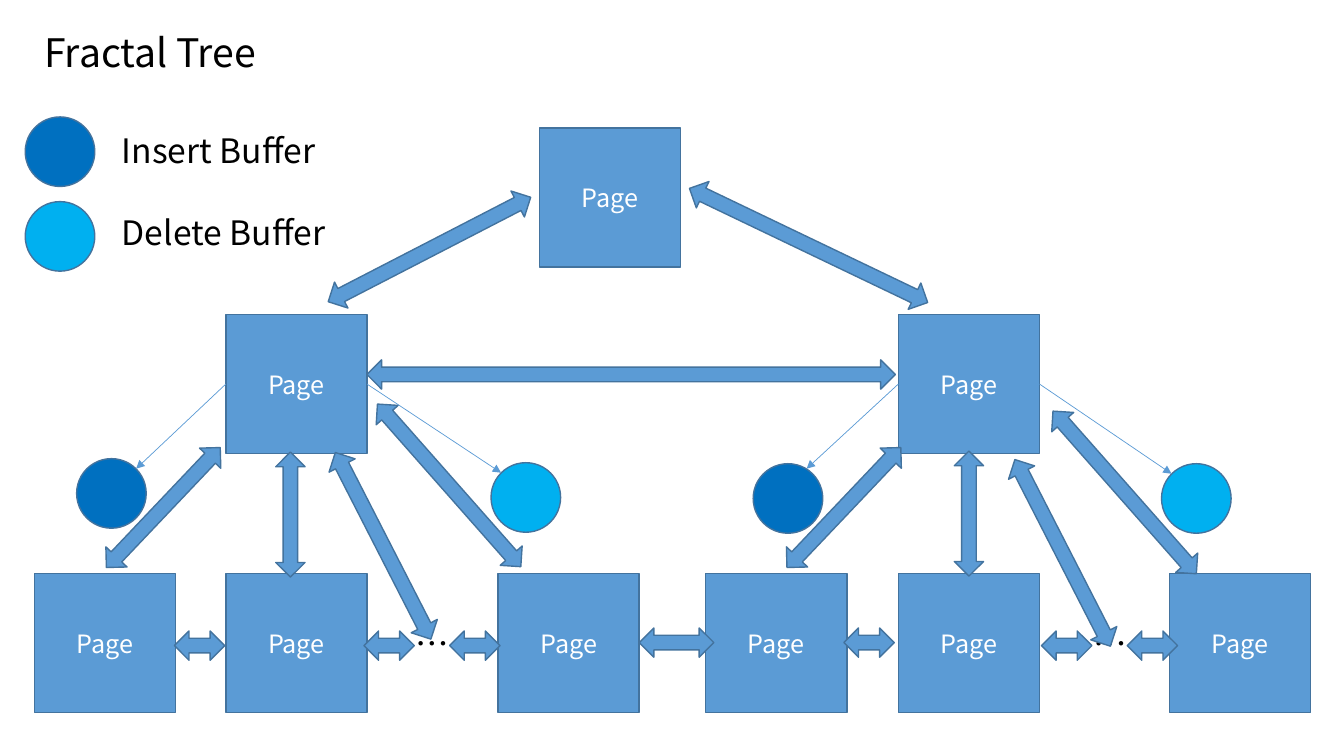
from lxml import etree
from pptx import Presentation
from pptx.dml.color import RGBColor
from pptx.enum.shapes import MSO_CONNECTOR, MSO_SHAPE
from pptx.enum.text import MSO_ANCHOR, PP_ALIGN
from pptx.oxml.ns import qn
from pptx.util import Inches, Pt

RECTANGLE = MSO_SHAPE.RECTANGLE
OVAL = MSO_SHAPE.OVAL
DOUBLE_ARROW = MSO_SHAPE.LEFT_RIGHT_ARROW
STRAIGHT = MSO_CONNECTOR.STRAIGHT
MIDDLE = MSO_ANCHOR.MIDDLE
TOP = MSO_ANCHOR.TOP
CENTER = PP_ALIGN.CENTER
LEFT = PP_ALIGN.LEFT

FONT = "Noto Sans CJK KR"
PAGE_BLUE = "5B9BD5"
OUTLINE = "43739E"
INSERT_BLUE = "0070C0"
DELETE_BLUE = "00B0F0"
WHITE = "FFFFFF"
BLACK = "000000"

PAGE_WIDTH, PAGE_HEIGHT = 1.4, 1.38
BUFFER_SIZE = 0.69
ARROW_HEIGHT = 0.29
LEFT_SIDE, RIGHT_SIDE = 1, 3

ROOT = (5.35, 1.27)
PARENT_LEFTS, PARENT_TOP = (2.24, 8.91), 3.12
LEAF_LEFTS, LEAF_TOP = (0.34, 2.24, 4.94, 7, 8.91, 11.6), 5.69

# left, top, width, rotation
TREE_ARROWS = [
    (0.8, 4.89, 1.64, 313.5), (7.55, 4.89, 1.64, 313.5),
    (3.13, 2.33, 2.26, 332.7), (6.71, 2.29, 2.62, 205.6),
    (10.08, 4.74, 2.15, 228.6), (9.5, 5.34, 2.08, 242.9),
    (2.76, 5.27, 2.08, 242.9), (3.38, 4.67, 2.15, 228.6),
    (2.26, 4.96, 1.24, 270), (8.99, 4.95, 1.24, 270),
]
SIBLING_ARROWS = [
    (3.64, 3.57, 5.24), (6.34, 6.23, 0.74), (8.37, 6.23, 0.5),
    *((left, 6.26, 0.5) for left in (1.73, 3.61, 4.46, 10.33, 11.18)),
]
ELLIPSIS_LEFTS, ELLIPSIS_TOP = (4.02, 10.75), 6.13

LEGEND = [
    ("Insert Buffer", INSERT_BLUE, 1.16, 1.24),
    ("Delete Buffer", DELETE_BLUE, 2, 2.05),
]
# parent index, side, circle position, colour, pointer end
BUFFERS = [
    (0, LEFT_SIDE, (0.76, 4.55), INSERT_BLUE, (1.35, 4.65)),
    (0, RIGHT_SIDE, (4.87, 4.59), DELETE_BLUE, (4.97, 4.69)),
    (1, LEFT_SIDE, (7.47, 4.6), INSERT_BLUE, (8, 4.65)),
    (1, RIGHT_SIDE, (11.52, 4.6), DELETE_BLUE, (11.62, 4.7)),
]


def color(hex_value):
    return RGBColor.from_string(hex_value)


def write(holder, text, size, hex_value, align=LEFT, anchor=TOP):
    frame = holder.text_frame
    frame.word_wrap = True
    frame.vertical_anchor = anchor
    paragraph = frame.paragraphs[0]
    paragraph.alignment = align
    run = paragraph.add_run()
    run.text = text
    run.font.color.rgb = color(hex_value)
    for name, value in {"name": FONT, "size": Pt(size)}.items():
        setattr(run.font, name, value)
    return paragraph


def add_label(slide, text, left, top, width, height, size, anchor=TOP):
    box = slide.shapes.add_textbox(
        Inches(left), Inches(top), Inches(width), Inches(height))
    return write(box, text, size, BLACK, anchor=anchor)


def add_outlined(slide, kind, left, top, width, height, fill=PAGE_BLUE):
    shape = slide.shapes.add_shape(
        kind, Inches(left), Inches(top), Inches(width), Inches(height))
    shape.shadow.inherit = False
    shape.fill.solid()
    shape.fill.fore_color.rgb = color(fill)
    shape.line.color.rgb = color(OUTLINE)
    shape.line.width = Pt(1)
    return shape


def add_page(slide, left, top):
    page = add_outlined(slide, RECTANGLE, left, top, PAGE_WIDTH, PAGE_HEIGHT)
    write(page, "Page", 18, WHITE, CENTER, MIDDLE)
    return page


def add_double_arrow(slide, left, top, width, rotation=0):
    arrow = add_outlined(slide, DOUBLE_ARROW, left, top, width, ARROW_HEIGHT)
    arrow.rotation = rotation


def add_buffer(slide, left, top, fill):
    add_outlined(slide, OVAL, left, top, BUFFER_SIZE, BUFFER_SIZE, fill)


def add_pointer(slide, page, side, end):
    """Draw a thin arrow from the middle of a page's side to a buffer."""
    end_x, end_y = map(Inches, end)
    pointer = slide.shapes.add_connector(
        STRAIGHT, page.left, page.top, end_x, end_y)
    pointer.begin_connect(page, side)
    pointer.line.color.rgb = color(PAGE_BLUE)
    pointer.line.width = Pt(0.5)
    etree.SubElement(pointer.line._get_or_add_ln(), qn("a:tailEnd"), type="triangle")
    etree.SubElement(pointer._element.spPr, qn("a:effectLst"))


def main():
    deck = Presentation()
    deck.slide_width, deck.slide_height = Inches(13.33), Inches(7.5)
    slide = deck.slides.add_slide(deck.slide_layouts[6])

    title = add_label(slide, "Fractal Tree", 0.34, 0.25, 12, 0.59, 28, MIDDLE)
    title.line_spacing = 0.9

    add_page(slide, *ROOT)
    parents = [add_page(slide, left, PARENT_TOP) for left in PARENT_LEFTS]
    for left in LEAF_LEFTS:
        add_page(slide, left, LEAF_TOP)

    for left in ELLIPSIS_LEFTS:
        add_label(slide, "…", left, ELLIPSIS_TOP, 0.69, 0.5, 24)
    for arrow in SIBLING_ARROWS + TREE_ARROWS:
        add_double_arrow(slide, *arrow)

    for parent, side, position, fill, end in BUFFERS:
        add_buffer(slide, *position, fill)
        add_pointer(slide, parents[parent], side, end)

    for text, fill, circle_top, text_top in LEGEND:
        add_buffer(slide, 0.25, circle_top, fill)
        add_label(slide, text, 1.11, text_top, 3.29, 0.5, 24)

    deck.save("out.pptx")


if __name__ == "__main__":
    main()
